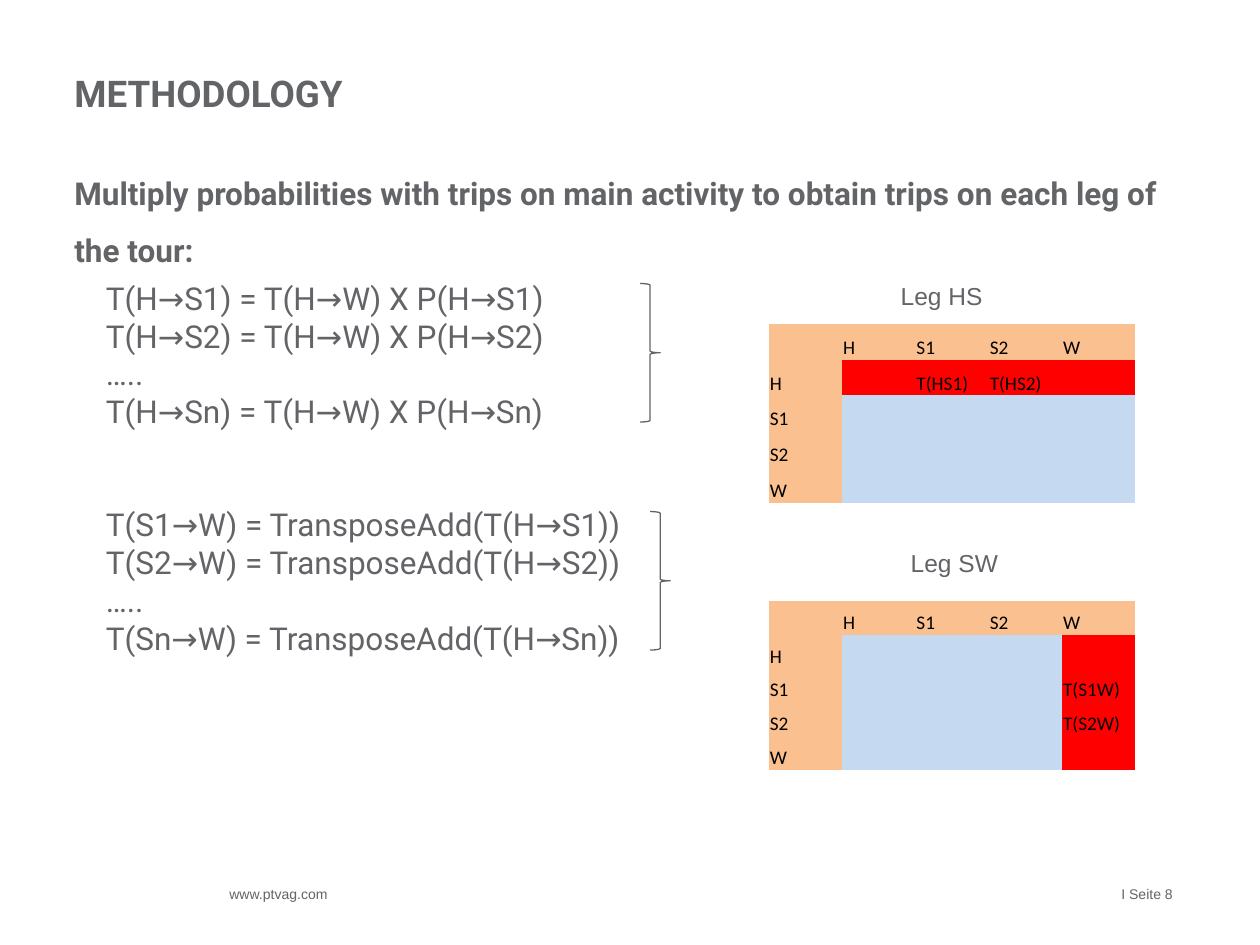
import pptx
import pptx.util
import pptx.dml.color
import pptx.enum.shapes
import pptx.enum.text
import pptx.oxml.ns
from lxml import etree

Inches = pptx.util.Inches
Pt = pptx.util.Pt
RGB = pptx.dml.color.RGBColor.from_string
MSO_ANCHOR = pptx.enum.text.MSO_ANCHOR

THEME = {
    "grey": RGB("636467"), "black": RGB("000000"),
    "header": RGB("FAC090"), "cell": RGB("C5D9F1"), "mark": RGB("FF0000"),
    "title": Pt(21), "body": Pt(18), "label": Pt(14), "table": Pt(11), "footer": Pt(8),
}
NO_GRID = "{2D5ABB26-0587-4C30-8999-92F81FD0307C}"


def write(p, text, name, size, bold=False, color=THEME["grey"]):
    r = p.add_run()
    r.text = text
    for key, value in {"name": name, "size": size, "bold": bold}.items():
        setattr(r.font, key, value)
    r.font.color.rgb = color


def set_frame(tf, **extra):
    values = {"margin_left": 0, "margin_top": 0, "margin_right": 0, "margin_bottom": 0,
              "word_wrap": True, "vertical_anchor": MSO_ANCHOR.TOP}
    for key, value in (values | extra).items():
        setattr(tf, key, value)


prs = pptx.Presentation()
prs.slide_width, prs.slide_height = Inches(10), Inches(7.5)
s = prs.slides.add_slide(prs.slide_layouts[5])

# Footer
for x, w, text in [(1.82, 0.86, "www.ptvag.com"), (8.9, 0.67, "I Seite 8")]:
    sp = s.shapes.add_textbox(Inches(x), Inches(6.92), Inches(w), Inches(0.24))
    set_frame(sp.text_frame, word_wrap=False, vertical_anchor=MSO_ANCHOR.BOTTOM)
    write(sp.text_frame.paragraphs[0], text, "Arial", THEME["footer"])

# Title
sp = s.shapes.title
sp.left, sp.top, sp.width, sp.height = Inches(0.59), Inches(0.54), Inches(8.82), Inches(0.83)
set_frame(sp.text_frame, auto_size=pptx.enum.text.MSO_AUTO_SIZE.NONE)
p = sp.text_frame.paragraphs[0]
p.alignment = pptx.enum.text.PP_ALIGN.LEFT
p.line_spacing = 1.05
write(p, "METHODOLOGY", "Roboto", THEME["title"], True)

# Statement and the two groups of formulas
sp = s.shapes.add_textbox(Inches(0.59), Inches(1.23), Inches(8.82), Inches(5.1))
tf = sp.text_frame
set_frame(tf)
p = tf.paragraphs[0]
p.line_spacing = 1.5
p.space_after = Pt(6)
write(p, "Multiply probabilities with trips on main activity to obtain trips on each leg of the tour:",
      "Roboto", THEME["body"], True)
groups = [
    ["T(H→S1) = T(H→W) X P(H→S1)", "T(H→S2) = T(H→W) X P(H→S2)", "…..",
     "T(H→Sn) = T(H→W) X P(H→Sn)"],
    ["T(S1→W) = TransposeAdd(T(H→S1))", "T(S2→W) = TransposeAdd(T(H→S2))", "…..",
     "T(Sn→W) = TransposeAdd(T(H→Sn))"],
]
for g, formulas in enumerate(groups):
    for i, formula in enumerate(formulas):
        p = tf.add_paragraph()
        p._p.get_or_add_pPr().set("marL", str(Inches(0.25)))
        if g > 0 and i == 0:
            p.space_before = Pt(43)
        write(p, formula, "Roboto", THEME["body"])

# Braces beside the formulas
for x, y in [(5.08, 2.25), (5.16, 4.06)]:
    sp = s.shapes.add_shape(pptx.enum.shapes.MSO_SHAPE.RIGHT_BRACE,
                            Inches(x), Inches(y), Inches(0.16), Inches(1.1))
    sp.shadow.inherit = False
    sp.fill.background()
    sp.line.color.rgb = THEME["grey"]
    sp.line.width = Pt(0.75)

# Leg matrices with their labels
zones = ["H", "S1", "S2", "W"]
legs = [
    {"label": "Leg HS", "at": (7.05, 2.18, 0.86), "top": 2.57, "height": 1.42,
     "marked": {(1, c) for c in range(1, 5)}, "trips": {(1, 2): "T(HS1)", (1, 3): "T(HS2)"}},
    {"label": "Leg SW", "at": (7.13, 4.3, 0.9), "top": 4.77, "height": 1.34,
     "marked": {(r, 4) for r in range(1, 5)}, "trips": {(2, 4): "T(S1W)", (3, 4): "T(S2W)"}},
]
headers = {(0, i): z for i, z in enumerate(zones, 1)} | {(i, 0): z for i, z in enumerate(zones, 1)}
for leg in legs:
    x, y, w = leg["at"]
    sp = s.shapes.add_textbox(Inches(x), Inches(y), Inches(w), Inches(0.34))
    sp.text_frame.word_wrap = False
    write(sp.text_frame.paragraphs[0], leg["label"], "Arial", THEME["label"])

    table = s.shapes.add_table(5, 5, Inches(6.1), Inches(leg["top"]),
                               Inches(2.91), Inches(leg["height"])).table
    table.first_row = table.horz_banding = False
    table._tbl.tblPr.find(pptx.oxml.ns.qn("a:tableStyleId")).text = NO_GRID
    texts = headers | leg["trips"]
    for row in range(5):
        for col in range(5):
            cell = table.cell(row, col)
            edge = Inches(0.01)
            for key, value in {"margin_left": edge, "margin_top": edge, "margin_right": edge,
                               "margin_bottom": 0, "vertical_anchor": MSO_ANCHOR.BOTTOM}.items():
                setattr(cell, key, value)
            fill = "header" if 0 in (row, col) else "mark" if (row, col) in leg["marked"] else "cell"
            cell.fill.solid()
            cell.fill.fore_color.rgb = THEME[fill]
            p = cell.text_frame.paragraphs[0]
            if (row, col) in texts:
                write(p, texts[row, col], "Calibri", THEME["table"], color=THEME["black"])
            else:
                # Small type in empty cells keeps the rows low
                etree.SubElement(p._p, pptx.oxml.ns.qn("a:endParaRPr"),
                                 sz=str(int(THEME["table"].pt * 100)))

prs.save("out.pptx")
